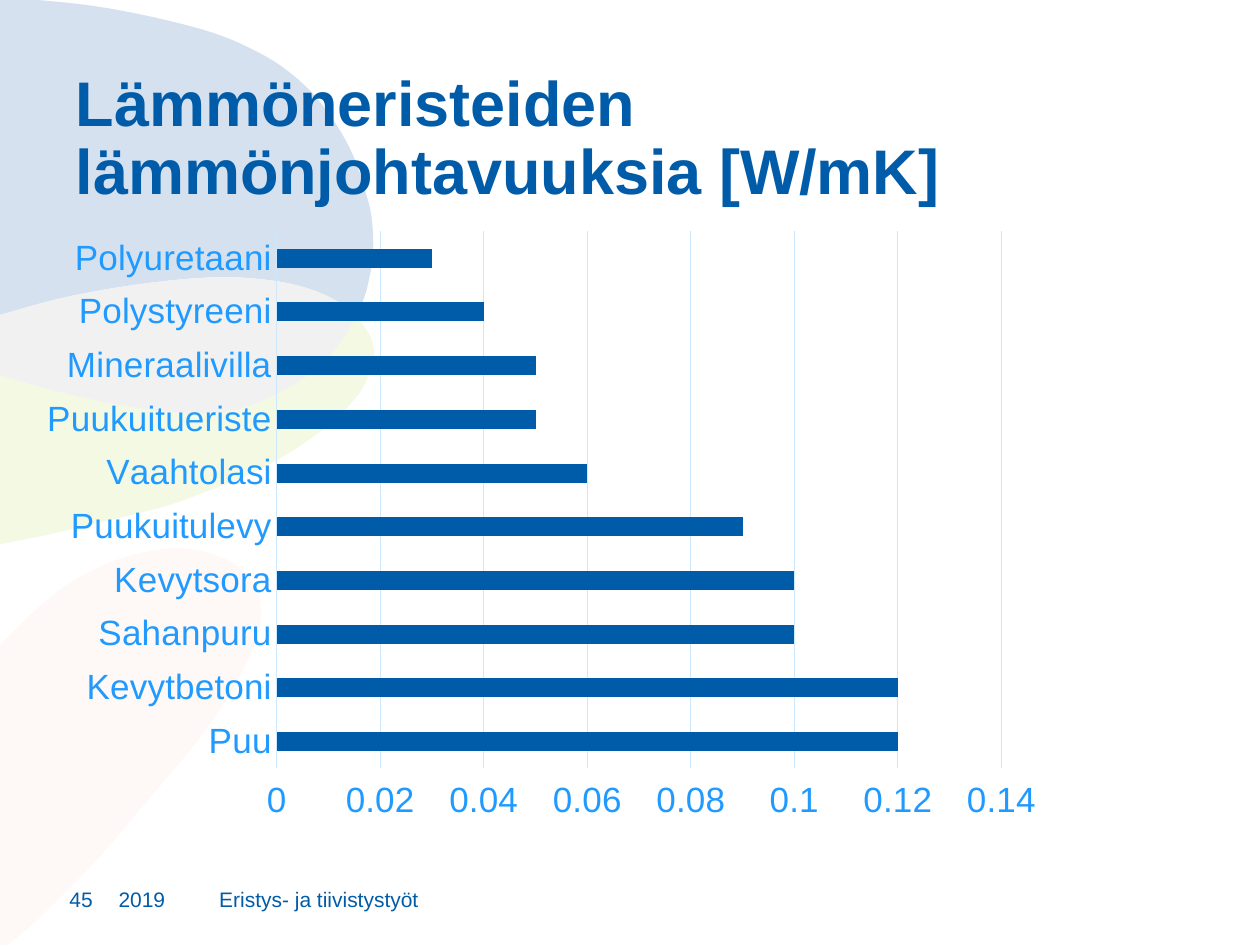
import pptx
import pptx.chart.data
import pptx.dml.color
import pptx.enum.chart
import pptx.enum.text
import pptx.oxml
import pptx.oxml.ns
import pptx.util

Cm, Pt = pptx.util.Cm, pptx.util.Pt
TICK = pptx.enum.chart.XL_TICK_MARK
ANCHOR = pptx.enum.text.MSO_ANCHOR

# Leaf edges, in hundredths of an inch
BLUE_BOTTOM = [(0, 250), (47, 237), (94, 228), (141, 222), (178, 220), (211, 222),
               (238, 227), (260, 235), (275, 244), (283, 251)]
BLUE_OUTER = [(283, 251), (291, 230), (296, 201), (295, 173), (290, 152), (281, 125),
              (267, 99), (248, 74), (224, 53), (198, 38), (169, 26), (132, 16),
              (94, 8), (61, 3), (30, 0)]
GREEN_TOP = [(283, 251), (273, 268), (260, 284), (240, 301), (211, 317), (184, 326),
             (156, 328), (124, 326), (82, 319), (43, 310), (0, 298)]
GREEN_OUTER = [(0, 432), (40, 424), (91, 412), (134, 401), (164, 390), (193, 379),
               (227, 361), (255, 342), (274, 325), (288, 308), (295, 290), (297, 281),
               (294, 267), (283, 251)]
PEACH = [(0, 512), (23, 489), (49, 467), (81, 449), (111, 439), (139, 435), (163, 438),
         (185, 447), (200, 461), (207, 481), (205, 503), (196, 525), (181, 553),
         (156, 589), (120, 632), (79, 680), (44, 716), (23, 736), (6, 750)]

CONDUCTIVITY = {
    "Puu": 0.12, "Kevytbetoni": 0.12, "Sahanpuru": 0.1, "Kevytsora": 0.1,
    "Puukuitulevy": 0.09, "Vaahtolasi": 0.06, "Puukuitueriste": 0.05,
    "Mineraalivilla": 0.05, "Polystyreeni": 0.04, "Polyuretaani": 0.03,
}


def rgb(value):
    return pptx.dml.color.RGBColor.from_string(value)


def smooth(points, steps=4):
    """Return a Catmull-Rom curve through the points as a polyline."""
    padded = [points[0], *points, points[-1]]
    curve = []
    for quad in zip(padded, padded[1:], padded[2:], padded[3:]):
        for i in range(steps):
            t = i / steps
            curve.append(tuple(
                b + t * (c - a + t * (2 * a - 5 * b + 4 * c - d
                                      + t * (3 * b - a - 3 * c + d))) / 2
                for a, b, c, d in zip(*quad)))
    return curve + [points[-1]]


class Deck:
    font = "Arial"
    blue = "005CA8"
    label = "219AFF"
    grid = "CCE8FF"

    def __init__(self):
        self.prs = pptx.Presentation()
        self.prs.slide_width, self.prs.slide_height = Cm(25.4), Cm(19.05)
        self.s = self.prs.slides.add_slide(self.prs.slide_layouts[5])

    def style(self, font, size, color, bold=False):
        font.name, font.size, font.bold = self.font, Pt(size), bold
        font.color.rgb = rgb(color)

    def leaf(self, points, color):
        unit = Cm(2.54) / 100
        (x, y), *rest = [(px * unit, py * unit) for px, py in points]
        builder = self.s.shapes.build_freeform(round(x), round(y))
        builder.add_line_segments(rest)
        sp = builder.convert_to_shape()
        sp.shadow.inherit = False
        sp.fill.solid()
        sp.fill.fore_color.rgb = rgb(color)
        sp.line.fill.background()

    def title(self, text, x, y, w, h):
        sp = self.s.shapes.title
        sp.left, sp.top, sp.width, sp.height = Cm(x), Cm(y), Cm(w), Cm(h)
        sp.element.getparent().append(sp.element)  # in front of the leaves
        tf = sp.text_frame
        tf.text = text
        tf.word_wrap = True
        tf.auto_size = pptx.enum.text.MSO_AUTO_SIZE.NONE
        tf.vertical_anchor = ANCHOR.TOP
        p = tf.paragraphs[0]
        p.alignment = pptx.enum.text.PP_ALIGN.LEFT
        p.line_spacing = 0.9
        self.style(p.runs[0].font, 36, self.blue, bold=True)

    def footer(self, text, x, w):
        tf = self.s.shapes.add_textbox(Cm(x), Cm(17.96), Cm(w), Cm(0.41)).text_frame
        tf.margin_left = tf.margin_right = tf.margin_top = tf.margin_bottom = 0
        tf.word_wrap = True
        tf.vertical_anchor = ANCHOR.BOTTOM
        tf.text = text
        self.style(tf.paragraphs[0].runs[0].font, 12, self.blue)

    def grid_line(self, line):
        line.color.rgb = rgb(self.grid)
        line.width = Pt(0.75)

    def bar_chart(self, values, x, y, w, h):
        data = pptx.chart.data.CategoryChartData()
        data.categories = list(values)
        data.add_series("Series 1", list(values.values()))
        chart = self.s.shapes.add_chart(
            pptx.enum.chart.XL_CHART_TYPE.BAR_CLUSTERED,
            Cm(x), Cm(y), Cm(w), Cm(h), data).chart
        chart.has_legend = chart.has_title = False
        self.style(chart.font, 10, self.blue)

        plot = chart.plots[0]
        plot.vary_by_categories = False
        plot.gap_width = 182
        fill = plot.series[0].format.fill
        fill.solid()
        fill.fore_color.rgb = rgb(self.blue)

        cat, val = chart.category_axis, chart.value_axis
        for axis in (cat, val):
            self.style(axis.tick_labels.font, 20, self.label)
            axis.minor_tick_mark = TICK.NONE
        cat.major_tick_mark = TICK.NONE
        cat.has_major_gridlines = False
        self.grid_line(cat.format.line)
        val.major_tick_mark = TICK.OUTSIDE
        val.minimum_scale, val.maximum_scale, val.major_unit = 0, 0.14, 0.02
        val.format.line.fill.background()
        val.has_major_gridlines = True
        self.grid_line(val.major_gridlines.format.line)
        self.plot_layout(chart, x=0.243, y=0.02, w=0.703, h=0.875)

    def plot_layout(self, chart, **box):
        """Fix the inner plot area, as fractions of the chart."""
        area = chart.element.find(".//" + pptx.oxml.ns.qn("c:plotArea"))
        for old in area.findall(pptx.oxml.ns.qn("c:layout")):
            area.remove(old)
        places = "".join(f'<c:{k} val="{v}"/>' for k, v in box.items())
        area.insert(0, pptx.oxml.parse_xml(
            f'<c:layout {pptx.oxml.ns.nsdecls("c")}><c:manualLayout>'
            '<c:layoutTarget val="inner"/><c:xMode val="edge"/><c:yMode val="edge"/>'
            f'{places}</c:manualLayout></c:layout>'))


def main():
    deck = Deck()
    deck.leaf(smooth(PEACH) + [(0, 750)], "FEF9F7")
    deck.leaf(smooth(GREEN_TOP) + smooth(GREEN_OUTER), "F3F9E3")
    deck.leaf(smooth(BLUE_BOTTOM) + smooth(BLUE_OUTER) + [(0, 0)], "D6E1F0")
    deck.leaf(smooth(BLUE_BOTTOM) + smooth(GREEN_TOP), "F1F1F1")
    deck.footer("2019", 2.39, 1.78)
    deck.footer("Eristys- ja tiivistystyöt", 4.42, 10.21)
    deck.footer("45", 1.4, 0.99)
    deck.bar_chart(CONDUCTIVITY, 0.53, 4.42, 20.78, 12.37)
    deck.title("Lämmöneristeiden lämmönjohtavuuksia [W/mK]", 1.27, 1.32, 22.86, 1.63)
    deck.prs.save("out.pptx")


if __name__ == "__main__":
    main()
